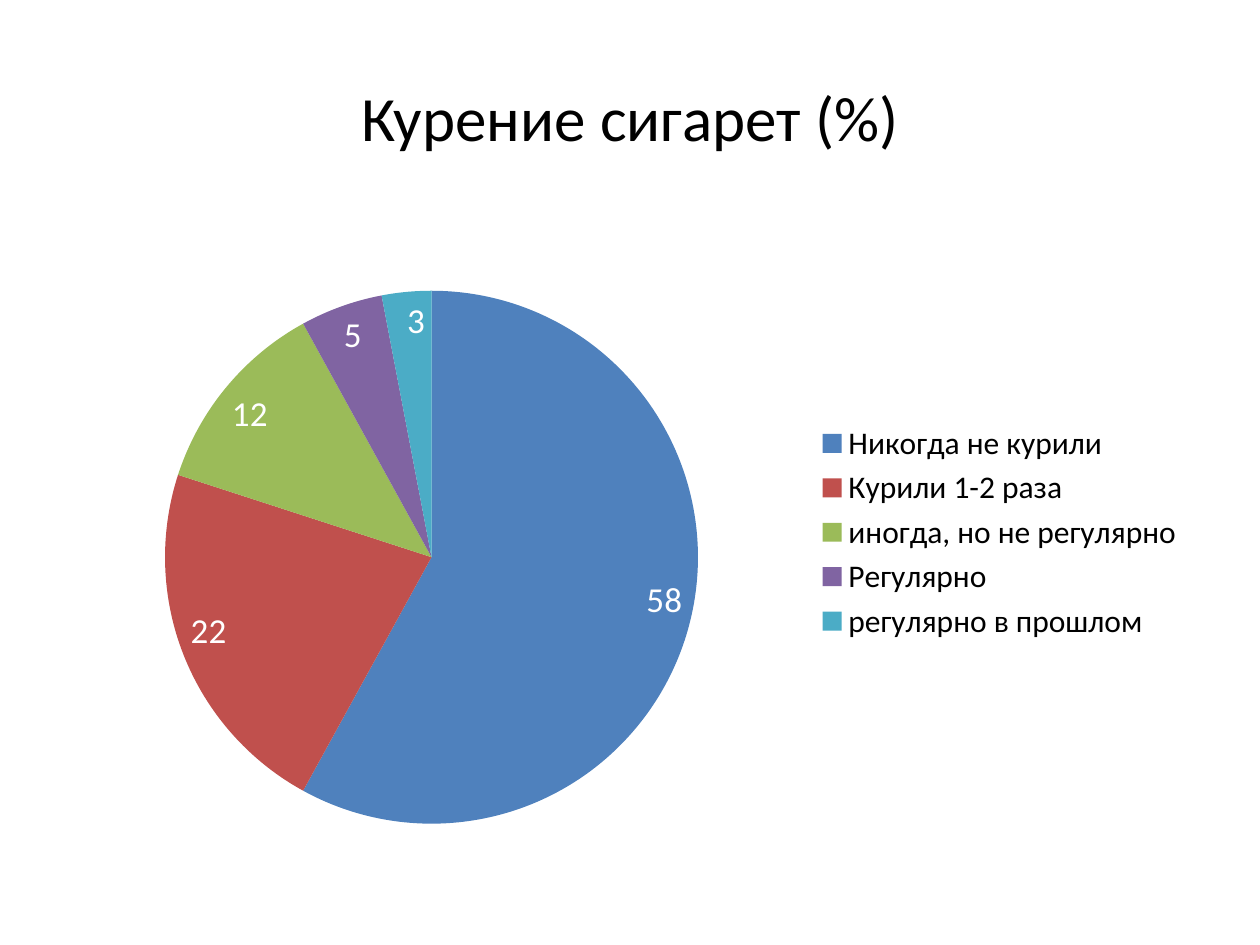
"""Build a slide with a pie chart of cigarette smoking shares."""
from lxml import etree
from pptx import Presentation
from pptx.chart.data import CategoryChartData
from pptx.dml.color import RGBColor
from pptx.enum.chart import XL_CHART_TYPE as ChartType
from pptx.enum.chart import XL_LABEL_POSITION as LabelPosition
from pptx.enum.chart import XL_LEGEND_POSITION as LegendPosition
from pptx.enum.text import MSO_ANCHOR, PP_ALIGN
from pptx.oxml.ns import qn
from pptx.util import Pt

FONT = "Calibri"
COLORS = {
    "text": "000000",
    "label": "FFFFFF",
    "Никогда не курили": "4F81BD",
    "Курили 1-2 раза": "C0504D",
    "иногда, но не регулярно": "9BBB59",
    "Регулярно": "8064A2",
    "регулярно в прошлом": "4BACC6",
}
SHARES = {
    "Никогда не курили": 58,
    "Курили 1-2 раза": 22,
    "иногда, но не регулярно": 12,
    "Регулярно": 5,
    "регулярно в прошлом": 3,
}
PIE_AREA = {"x": 0.09, "y": 0.11, "w": 0.47, "h": 0.86}


def style(font, size, color):
    font.name = FONT
    font.size = Pt(size)
    font.color.rgb = RGBColor.from_string(COLORS[color])


deck = Presentation()
deck.slide_width, deck.slide_height = Pt(720), Pt(540)
slide = deck.slides.add_slide(deck.slide_layouts[5])

heading = slide.shapes.title
heading.left, heading.top, heading.width, heading.height = Pt(36), Pt(21.6), Pt(648), Pt(90)
heading.text_frame.text = "Курение сигарет (%)"
heading.text_frame.vertical_anchor = MSO_ANCHOR.MIDDLE
heading_line = heading.text_frame.paragraphs[0]
heading_line.alignment = PP_ALIGN.CENTER
style(heading_line.runs[0].font, 36, "text")

smoking = CategoryChartData()
smoking.categories = list(SHARES)
smoking.add_series("Series 1", list(SHARES.values()))
pie = slide.shapes.add_chart(
    ChartType.PIE, Pt(36), Pt(126), Pt(648), Pt(356.4), smoking
).chart
pie.has_title = False
style(pie.font, 18, "text")

pie.has_legend = True
pie.legend.position = LegendPosition.RIGHT
pie.legend.include_in_layout = False
style(pie.legend.font, 18, "text")

plot = pie.plots[0]
plot.vary_by_categories = True
for index, answer in enumerate(SHARES):
    fill = plot.series[0].points[index].format.fill
    fill.solid()
    fill.fore_color.rgb = RGBColor.from_string(COLORS[answer])

plot.has_data_labels = True
labels = plot.data_labels
labels.show_value = True
labels.show_percentage = False
labels.position = LabelPosition.INSIDE_END
style(labels.font, 20, "label")

plot_area = pie.element.find(".//" + qn("c:plotArea"))
for old_layout in plot_area.findall(qn("c:layout")):
    plot_area.remove(old_layout)
layout = etree.Element(qn("c:layout"))
plot_area.insert(0, layout)
manual = etree.SubElement(layout, qn("c:manualLayout"))
settings = {"layoutTarget": "inner", "xMode": "edge", "yMode": "edge", **PIE_AREA}
for tag, value in settings.items():
    etree.SubElement(manual, qn("c:" + tag)).set("val", str(value))

deck.save("out.pptx")
